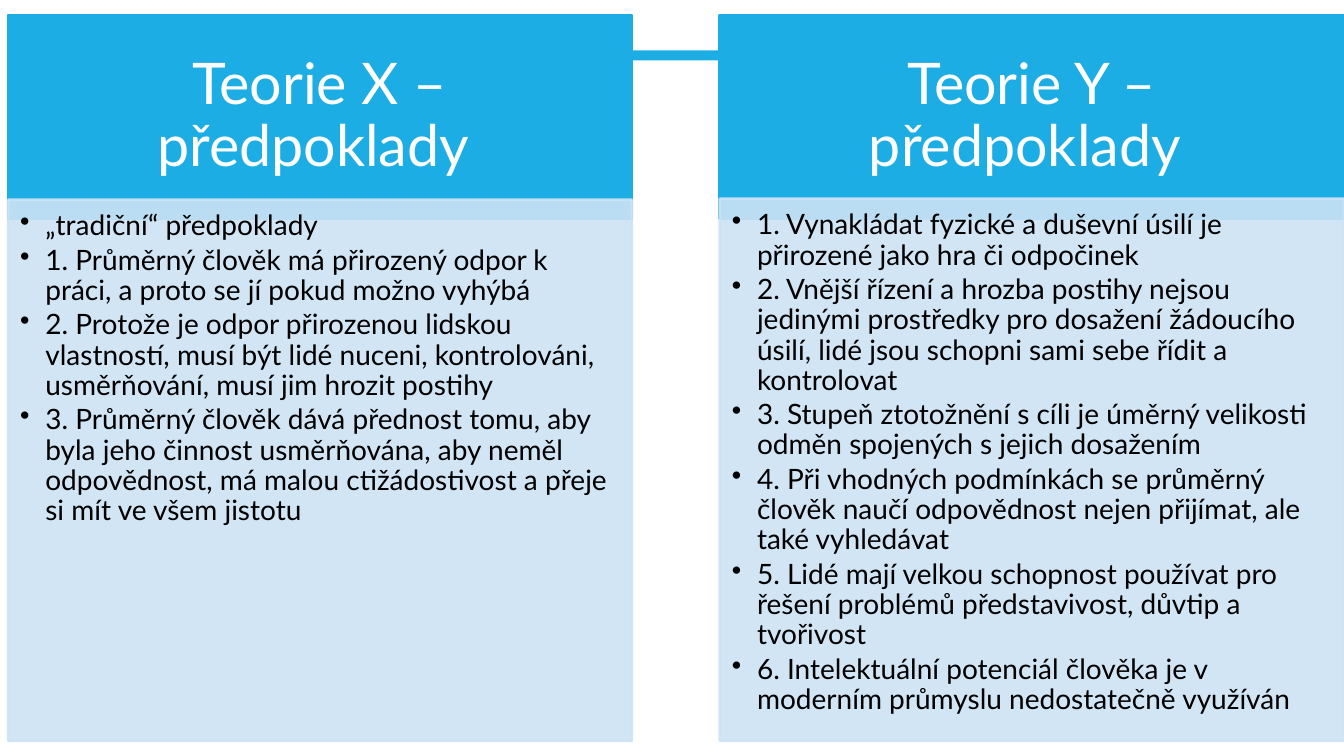
from dataclasses import dataclass

from lxml.etree import SubElement
from pptx import Presentation
from pptx.dml.color import RGBColor
from pptx.enum.shapes import MSO_SHAPE
from pptx.enum.text import MSO_ANCHOR, PP_ALIGN
from pptx.oxml.ns import qn
from pptx.shapes.autoshape import Shape
from pptx.slide import Slide
from pptx.text.text import _Paragraph
from pptx.util import Pt


@dataclass(frozen=True)
class Theme:
    accent: RGBColor = RGBColor(0x1C, 0xAD, 0xE4)
    panel: RGBColor = RGBColor(0xCD, 0xE3, 0xF5)
    heading_text: RGBColor = RGBColor(0xFF, 0xFF, 0xFF)
    body_text: RGBColor = RGBColor(0x00, 0x00, 0x00)
    font: str = "Lato"
    heading_size: float = 41
    body_size: float = 20
    outline: float = 1.75
    panel_opacity: int = 90


@dataclass(frozen=True)
class Box:
    left: float
    top: float
    width: float
    height: float


@dataclass(frozen=True)
class Theory:
    heading: str
    left: float
    panel_top: float
    assumptions: tuple[str, ...]


THEME = Theme()
COLUMN_WIDTH = 445.68
HEADING_TOP = 10.8
HEADING_HEIGHT = 145.44
PANEL_BOTTOM = 529.2
BULLET_INDENT = 18
CONNECTING_BAR = Box(334.08, 36, 291.6, 7.2)

THEORIES = (
    Theory(
        "Teorie X – předpoklady ",
        5.76,
        142.56,
        (
            "„tradiční“ předpoklady",
            "1. Průměrný člověk má přirozený odpor k práci, a proto se jí pokud možno vyhýbá",
            "2. Protože je odpor přirozenou lidskou vlastností, musí být lidé nuceni, "
            "kontrolováni, usměrňování, musí jim hrozit postihy",
            "3. Průměrný člověk dává přednost tomu, aby byla jeho činnost usměrňována, "
            "aby neměl odpovědnost, má malou ctižádostivost a přeje si mít ve všem jistotu",
        ),
    ),
    Theory(
        "Teorie Y – předpoklady ",
        514.08,
        141.84,
        (
            "1. Vynakládat fyzické a duševní úsilí je přirozené jako hra či odpočinek",
            "2. Vnější řízení a hrozba postihy nejsou jedinými prostředky pro dosažení "
            "žádoucího úsilí, lidé jsou schopni sami sebe řídit a kontrolovat",
            "3. Stupeň ztotožnění s cíli je úměrný velikosti odměn spojených s jejich dosažením",
            "4. Při vhodných podmínkách se průměrný člověk naučí odpovědnost nejen přijímat, "
            "ale také vyhledávat",
            "5. Lidé mají velkou schopnost používat pro řešení problémů představivost, "
            "důvtip a tvořivost",
            "6. Intelektuální potenciál člověka je v moderním průmyslu nedostatečně využíván",
        ),
    ),
)


def add_block(slide: Slide, box: Box, color: RGBColor) -> Shape:
    block = slide.shapes.add_shape(
        MSO_SHAPE.RECTANGLE, Pt(box.left), Pt(box.top), Pt(box.width), Pt(box.height)
    )
    block.shadow.inherit = False
    block.fill.solid()
    block.fill.fore_color.rgb = color
    block.line.color.rgb = color
    block.line.width = Pt(THEME.outline)
    return block


def set_opacity(block: Shape, percent: int) -> None:
    for color in block.element.spPr.iter(qn("a:srgbClr")):
        SubElement(color, qn("a:alpha"), val=str(percent * 1000))


def set_insets(block: Shape, left: float, top: float, right: float, bottom: float) -> None:
    frame = block.text_frame
    frame.word_wrap = True
    frame.margin_left, frame.margin_top = Pt(left), Pt(top)
    frame.margin_right, frame.margin_bottom = Pt(right), Pt(bottom)


def style_paragraph(
    paragraph: _Paragraph, size: float, color: RGBColor, align: PP_ALIGN, space_ratio: float
) -> None:
    paragraph.alignment = align
    paragraph.line_spacing = 0.9
    paragraph.space_after = Pt(size * space_ratio)
    paragraph.font.name = THEME.font
    paragraph.font.size = Pt(size)
    paragraph.font.color.rgb = color


def add_bullet(paragraph: _Paragraph) -> None:
    paragraph.level = 1
    properties = paragraph._p.get_or_add_pPr()
    properties.set("marL", str(Pt(BULLET_INDENT)))
    properties.set("indent", str(-Pt(BULLET_INDENT)))
    SubElement(properties, qn("a:buChar"), char="•")


def draw_heading(slide: Slide, theory: Theory) -> None:
    box = Box(theory.left, HEADING_TOP, COLUMN_WIDTH, HEADING_HEIGHT)
    heading = add_block(slide, box, THEME.accent)
    set_insets(heading, 23, 13, 23, 13)
    heading.text_frame.vertical_anchor = MSO_ANCHOR.MIDDLE
    heading.text_frame.text = theory.heading
    style_paragraph(
        heading.text_frame.paragraphs[0],
        THEME.heading_size,
        THEME.heading_text,
        PP_ALIGN.CENTER,
        0.35,
    )


def draw_assumptions(slide: Slide, theory: Theory) -> None:
    box = Box(theory.left, theory.panel_top, COLUMN_WIDTH, PANEL_BOTTOM - theory.panel_top)
    panel = add_block(slide, box, THEME.panel)
    set_opacity(panel, THEME.panel_opacity)
    set_insets(panel, 8.64, 8.64, 11.52, 12.24)
    panel.text_frame.vertical_anchor = MSO_ANCHOR.TOP
    panel.text_frame.text = "\n".join(theory.assumptions)
    for paragraph in panel.text_frame.paragraphs:
        add_bullet(paragraph)
        style_paragraph(paragraph, THEME.body_size, THEME.body_text, PP_ALIGN.LEFT, 0.15)


def main() -> None:
    presentation = Presentation()
    presentation.slide_width, presentation.slide_height = Pt(960), Pt(540)
    slide = presentation.slides.add_slide(presentation.slide_layouts[6])
    connecting_bar = add_block(slide, CONNECTING_BAR, THEME.accent)
    connecting_bar.line.fill.background()
    for theory in THEORIES:
        draw_heading(slide, theory)
        draw_assumptions(slide, theory)
    presentation.save("out.pptx")


if __name__ == "__main__":
    main()
